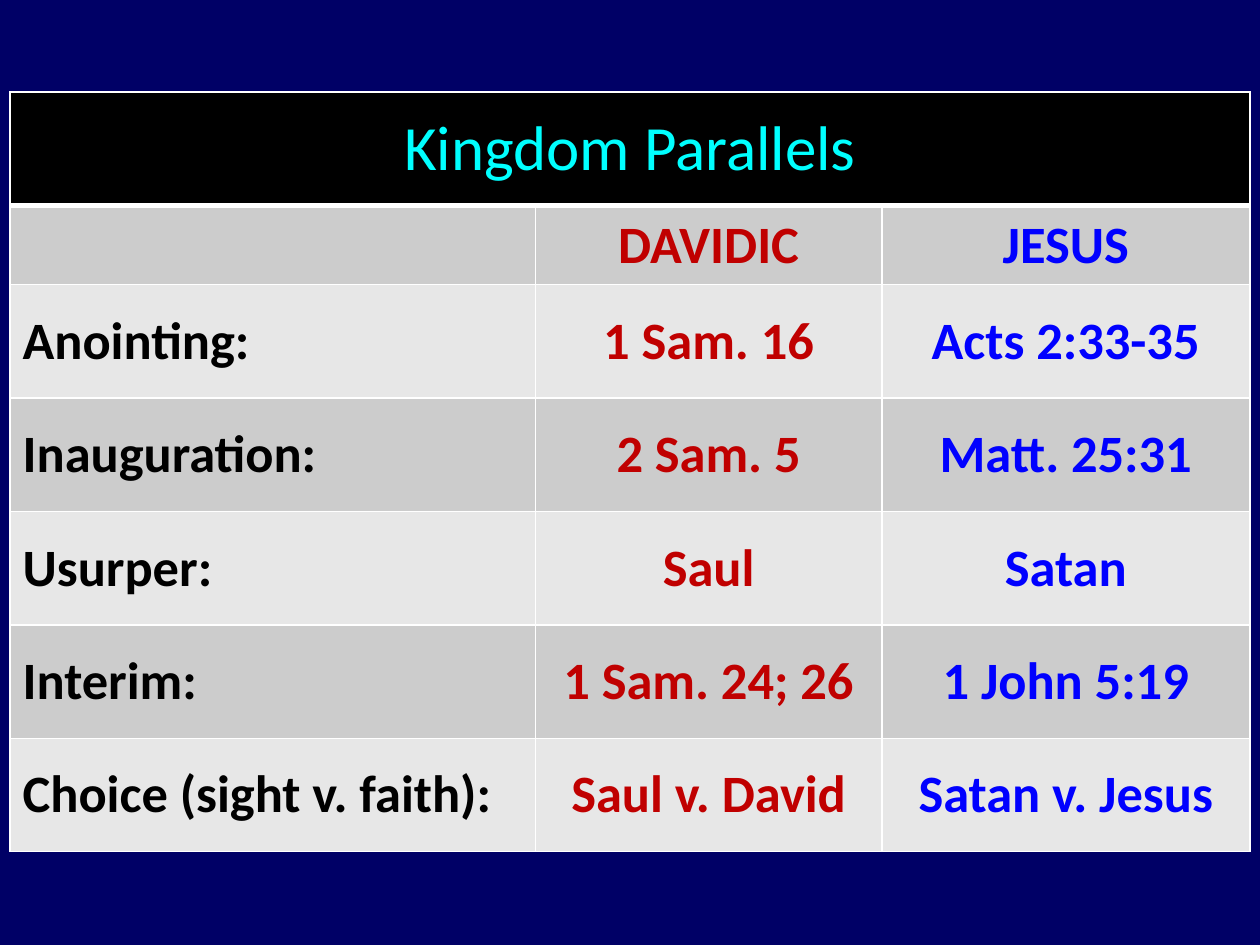
"""Build the Kingdom Parallels table slide."""
from lxml import etree
from pptx import Presentation
from pptx import util as u
from pptx.dml.color import RGBColor
from pptx.enum import text
from pptx.oxml import ns

NAVY = RGBColor(0x00, 0x00, 0x66)
BLACK = RGBColor(0x00, 0x00, 0x00)
WHITE = RGBColor(0xFF, 0xFF, 0xFF)
CYAN = RGBColor(0x00, 0xFF, 0xFF)
RED = RGBColor(0xC0, 0x00, 0x00)
BLUE = RGBColor(0x00, 0x00, 0xFF)
DARK = RGBColor(0xCC, 0xCC, 0xCC)
LIGHT = RGBColor(0xE7, 0xE7, 0xE7)

FONT = "Calibri"
TITLE = "Kingdom Parallels"
WIDTHS = (4.17, 2.75, 2.92)
HEIGHTS = (0.9, 0.63) + (0.9,) * 5
INKS = (BLACK, RED, BLUE)
ROWS = (
    ("", "DAVIDIC", "JESUS"),
    ("Anointing:", "1 Sam. 16", "Acts 2:33-35"),
    ("Inauguration:", "2 Sam. 5", "Matt. 25:31"),
    ("Usurper:", "Saul", "Satan"),
    ("Interim:", "1 Sam. 24; 26", "1 John 5:19"),
    ("Choice (sight v. faith):", "Saul v. David", "Satan v. Jesus"),
)


def edge(cell, side, width):
    """Draw one white border of a cell."""
    props = cell._tc.get_or_add_tcPr()
    line = etree.SubElement(props, ns.qn(f"a:ln{side}"), w=str(u.Pt(width)))
    fill = etree.SubElement(line, ns.qn("a:solidFill"))
    etree.SubElement(fill, ns.qn("a:srgbClr"), val=str(WHITE))


def frame(cell, top=1, base=1):
    """Draw the four borders of a cell."""
    for side, width in zip("LRTB", (1, 1, top, base)):
        edge(cell, side, width)


def paint(cell, color):
    """Fill a cell and centre its text vertically."""
    cell.fill.solid()
    cell.fill.fore_color.rgb = color
    cell.vertical_anchor = text.MSO_ANCHOR.MIDDLE


def write(cell, words, size, color, bold, align):
    """Put one formatted run into a cell."""
    para = cell.text_frame.paragraphs[0]
    para.alignment = align
    run = para.add_run()
    run.text = words
    font = run.font
    font.name, font.size, font.bold = FONT, u.Pt(size), bold
    font.color.rgb = color


def grid(slide):
    """Add the table with its column and row sizes."""
    shape = slide.shapes.add_table(
        len(HEIGHTS), len(WIDTHS), u.Inches(0.08), u.Inches(0.73),
        u.Inches(sum(WIDTHS)), u.Inches(sum(HEIGHTS)))
    table = shape.table
    for col, width in zip(table.columns, WIDTHS):
        col.width = u.Inches(width)
    for row, height in zip(table.rows, HEIGHTS):
        row.height = u.Inches(height)
    return table


def head(table):
    """Merge and format the title row."""
    last = len(WIDTHS) - 1
    for col in range(last + 1):
        cell = table.cell(0, col)
        frame(cell, base=3)
        paint(cell, BLACK)
    cell = table.cell(0, 0)
    cell.merge(table.cell(0, last))
    write(cell, TITLE, 36, CYAN, False, text.PP_ALIGN.CENTER)


def body(table):
    """Fill in the banded rows."""
    for row, words in enumerate(ROWS, 1):
        for col, (word, ink) in enumerate(zip(words, INKS)):
            cell = table.cell(row, col)
            frame(cell, top=3 if row == 1 else 1)
            paint(cell, DARK if row % 2 else LIGHT)
            align = text.PP_ALIGN.CENTER if col else text.PP_ALIGN.LEFT
            if word:
                write(cell, word, 30, ink, True, align)


def main():
    """Make the slide and save it."""
    deck = Presentation()
    deck.slide_width, deck.slide_height = u.Inches(10), u.Inches(7.5)
    slide = deck.slides.add_slide(deck.slide_layouts[6])
    back = slide.background.fill
    back.solid()
    back.fore_color.rgb = NAVY
    table = grid(slide)
    head(table)
    body(table)
    deck.save("out.pptx")


if __name__ == "__main__":
    main()
